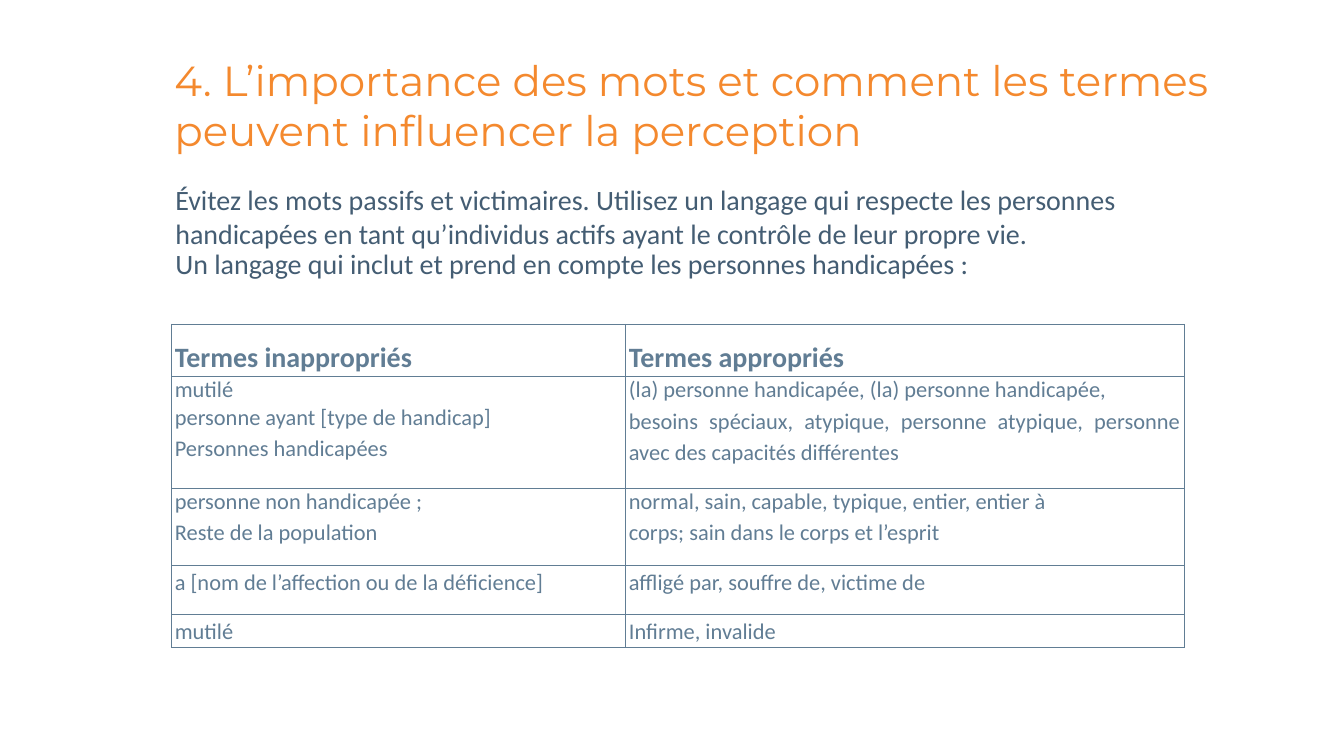
from lxml import etree
from pptx import Presentation
from pptx.dml.color import RGBColor
from pptx.enum.text import MSO_ANCHOR, PP_ALIGN
from pptx.oxml.ns import qn
from pptx.util import Inches, Pt

SLATE = "617D94"


def write(frame, lines, spacings, font, size, color, bold=False, align=PP_ALIGN.LEFT):
    """Fill a text frame with one paragraph per line."""
    frame.word_wrap = True
    for i, (line, spacing) in enumerate(zip(lines, spacings)):
        paragraph = frame.paragraphs[0] if i == 0 else frame.add_paragraph()
        paragraph.text = line
        paragraph.alignment = align
        paragraph.line_spacing = spacing
        paragraph.font.name = font
        paragraph.font.size = Pt(size)
        paragraph.font.bold = bold
        paragraph.font.color.rgb = RGBColor.from_string(color)


def add_borders(cell, color):
    """Draw a 1 pt line on each side of a cell."""
    properties = cell._tc.get_or_add_tcPr()
    for i, side in enumerate(("a:lnL", "a:lnR", "a:lnT", "a:lnB")):
        line = etree.Element(qn(side), w=str(Pt(1)))
        fill = etree.SubElement(line, qn("a:solidFill"))
        etree.SubElement(fill, qn("a:srgbClr"), val=color)
        properties.insert(i, line)


prs = Presentation()
prs.slide_width, prs.slide_height = Inches(26.67), Inches(15)
slide = prs.slides.add_slide(prs.slide_layouts[6])

# Title and introduction
texts = [
    ((3.4, 1.02, 21.34, 1.67),
     ["4. L’importance des mots et comment les termes peuvent influencer la perception"],
     [1.0], "Montserrat", 60, "F4892E"),
    ((3.42, 3.57, 20.04, 1.99),
     ["Évitez les mots passifs et victimaires. Utilisez un langage qui respecte les personnes "
      "handicapées en tant qu’individus actifs ayant le contrôle de leur propre vie.",
      "Un langage qui inclut et prend en compte les personnes handicapées :"],
     [1.0, 0.9], "Calibri", 40, "445D73"),
]
for box, lines, spacings, font, size, color in texts:
    frame = slide.shapes.add_textbox(*map(Inches, box)).text_frame
    frame.margin_left = frame.margin_right = Inches(0.06)
    frame.margin_top = frame.margin_bottom = Inches(0.06)
    write(frame, lines, spacings, font, size, color)

# Table of terms: row height, inappropriate terms, appropriate terms
rows = [
    (1.04, ["Termes inappropriés"], ["Termes appropriés"]),
    (2.21, ["mutilé", "personne ayant [type de handicap]", "Personnes handicapées"],
     ["(la) personne handicapée, (la) personne handicapée,",
      "besoins spéciaux, atypique, personne atypique, personne avec des capacités différentes"]),
    (1.54, ["personne non handicapée\u00a0;", "Reste de la population"],
     ["normal, sain, capable, typique, entier, entier à",
      "corps; sain dans le corps et l’esprit"]),
    (0.97, ["a [nom de l’affection ou de la déficience]"], ["affligé par, souffre de, victime de"]),
    (0.66, ["mutilé"], ["Infirme, invalide"]),
]
widths = [9.01, 11.09]
terms = slide.shapes.add_table(
    len(rows), len(widths), Inches(3.4), Inches(6.43),
    Inches(sum(widths)), Inches(sum(row[0] for row in rows))).table
for column, width in zip(terms.columns, widths):
    column.width = Inches(width)

for r, (height, *entries) in enumerate(rows):
    terms.rows[r].height = Inches(height)
    header = r == 0
    for c, lines in enumerate(entries):
        cell = terms.cell(r, c)
        cell.fill.background()
        cell.vertical_anchor = MSO_ANCHOR.TOP
        cell.margin_left = cell.margin_right = Inches(0.07)
        cell.margin_top = cell.margin_bottom = 0
        add_borders(cell, SLATE)
        # Only the last line of a cell is spaced out
        spacings = [1.0] * (len(lines) - 1) + [1.5 if header else 1.15]
        write(cell.text_frame, lines, spacings, "Calibri", 40 if header else 32,
              SLATE, header, PP_ALIGN.JUSTIFY)

prs.save("out.pptx")
